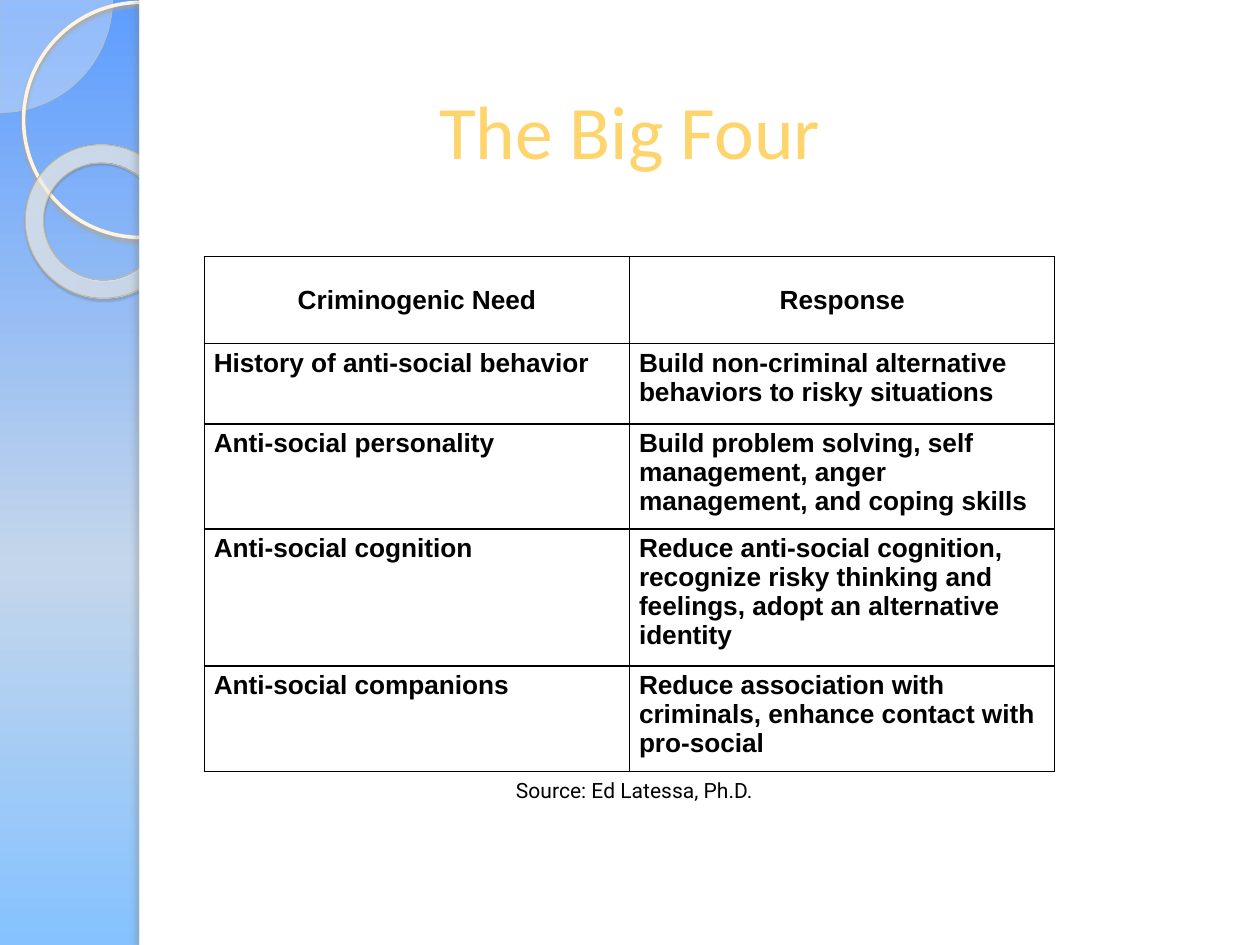
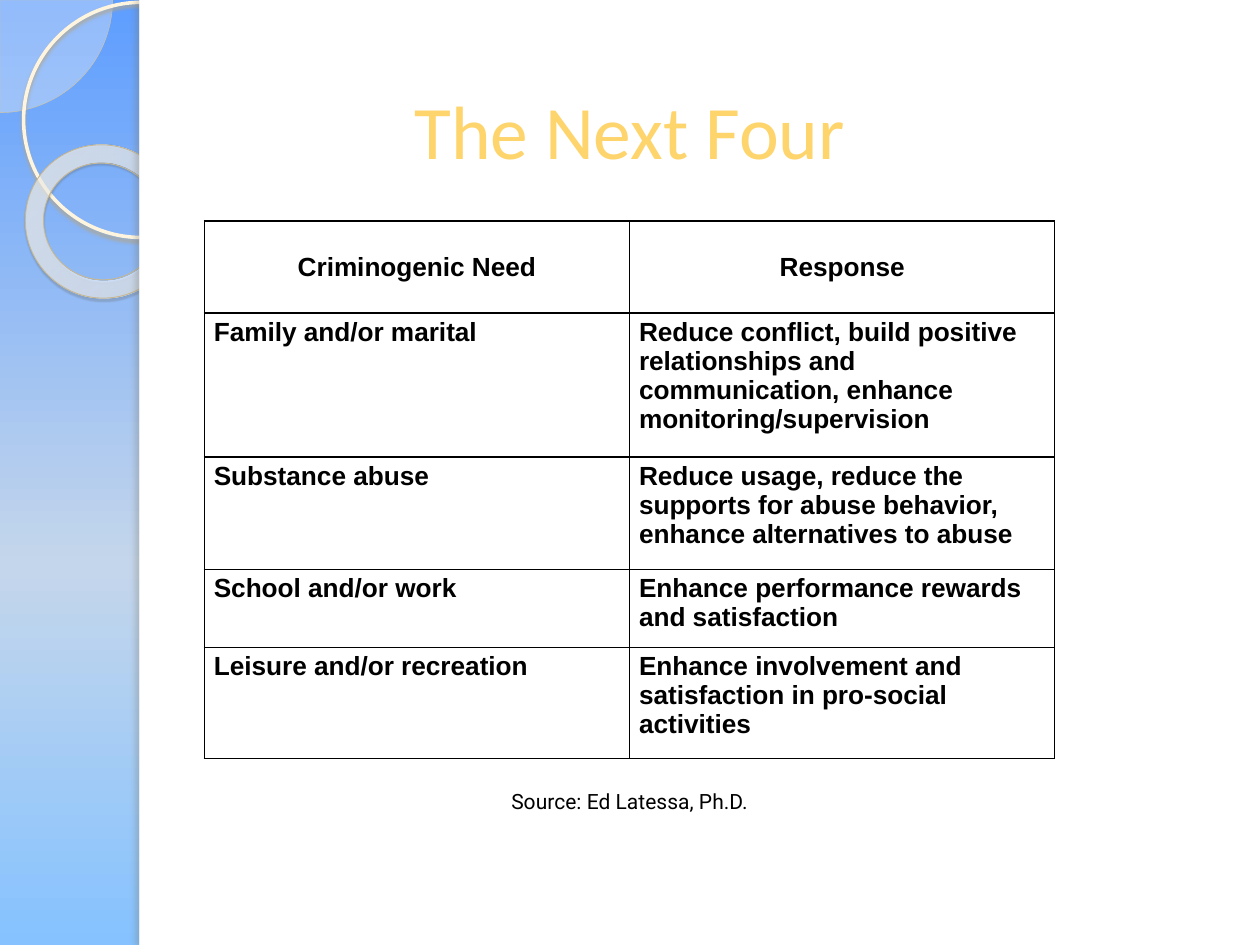
from lxml.etree import SubElement
from pptx import Presentation
from pptx.dml.color import RGBColor
from pptx.enum.shapes import MSO_SHAPE
from pptx.enum.text import MSO_ANCHOR, PP_ALIGN
from pptx.oxml.ns import qn
from pptx.util import Inches, Pt

WIDTH, HEIGHT = Inches(10.67), Inches(8)
COLUMNS, ROWS = 32, 24
GOLD, BLACK, WHITE = "FED46C", "000000", "FFFFFF"
SKY = [(0, "5E9EFF", 100), (60, "C4D6EB", 100), (100, "85C2FF", 100)]
RING = [(0, "FFFCF6", 70), (70, "FFFEFB", 55), (100, "F0D28E", 60)]
HEADINGS = ("Criminogenic Need", "Response")
SOURCE = "Source: Ed Latessa, Ph.D."

BIG_FOUR = [
    HEADINGS,
    ("History of anti-social behavior",
     "Build non-criminal alternative behaviors to risky situations"),
    ("Anti-social personality",
     "Build problem solving, self management, anger management, and coping skills"),
    ("Anti-social cognition",
     "Reduce anti-social cognition, recognize risky thinking and feelings, "
     "adopt an alternative identity"),
    ("Anti-social companions",
     "Reduce association with criminals, enhance contact with pro-social"),
]
NEXT_FOUR = [
    HEADINGS,
    ("Family and/or marital",
     "Reduce conflict, build positive relationships and communication, "
     "enhance monitoring/supervision"),
    ("Substance abuse",
     "Reduce usage, reduce the supports for abuse behavior, "
     "enhance alternatives to abuse"),
    ("School and/or work", "Enhance performance rewards and satisfaction"),
    ("Leisure and/or recreation",
     "Enhance involvement and satisfaction in pro-social activities"),
]


def across(columns):
    return round(WIDTH * columns / COLUMNS)


def down(rows):
    return round(HEIGHT * rows / ROWS)


def place(left, top, width, height):
    return across(left), down(top), across(width), down(height)


def color(code):
    return RGBColor.from_string(code)


def add_color(parent, code, opacity=100):
    tint = SubElement(parent, qn("a:srgbClr"), val=code)
    if opacity < 100:
        SubElement(tint, qn("a:alpha"), val=str(opacity * 1000))


def paint_gradient(fill, owner, stops, center=None):
    fill.gradient()
    gradient = owner.find(".//" + qn("a:gradFill"))
    for child in list(gradient):
        gradient.remove(child)
    stop_list = SubElement(gradient, qn("a:gsLst"))
    for position, code, opacity in stops:
        stop = SubElement(stop_list, qn("a:gs"), pos=str(position * 1000))
        add_color(stop, code, opacity)
    if center is None:
        SubElement(gradient, qn("a:lin"), ang="5400000", scaled="0")
    else:
        radial = SubElement(gradient, qn("a:path"), path="circle")
        edges = {side: str(share * 1000) for side, share in zip("ltrb", center)}
        SubElement(radial, qn("a:fillToRect"), **edges)


def add_figure(page, kind, area, fill=None, opacity=100, line=None):
    figure = page.shapes.add_shape(kind, *place(*area))
    figure.shadow.inherit = False
    if fill:
        figure.fill.solid()
        figure.fill.fore_color.rgb = color(fill)
        if opacity < 100:
            tint = figure.element.spPr.find(qn("a:solidFill")).find(qn("a:srgbClr"))
            SubElement(tint, qn("a:alpha"), val=str(opacity * 1000))
    else:
        figure.fill.background()
    if line:
        figure.line.color.rgb = color(line[0])
        figure.line.width = Pt(line[1])
    else:
        figure.line.fill.background()
    return figure


def cast_shadow(figure, code, opacity, blur, distance, angle):
    effects = figure.element.spPr.find(qn("a:effectLst"))
    shadow = SubElement(
        effects, qn("a:outerShdw"), blurRad=str(Pt(blur)), dist=str(Pt(distance)),
        dir=str(angle * 60000), algn="tl", rotWithShape="0")
    add_color(shadow, code, opacity)


def add_side_band(page):
    corner = add_figure(page, MSO_SHAPE.PIE, (-2.86, -2.86, 5.72, 5.72),
                        "FEFAF4", 33, ("D3C39F", 0.25))
    corner.adjustments[0] = 0
    corner.adjustments[1] = 54
    circle = add_figure(page, MSO_SHAPE.OVAL, (0.6, 0.06, 5.97, 5.97),
                        line=("FFF5DE", 2.15))
    cast_shadow(circle, "B0A68F", 85, 2, 2, 90)
    ring = add_figure(page, MSO_SHAPE.DONUT, (0.63, 3.69, 3.93, 3.87),
                      line=("C7B893", 0.58))
    ring.adjustments[0] = 0.12
    ring.rotation = 38.6
    paint_gradient(ring.fill, ring.element, RING, (-408, -50, 508, 150))
    cast_shadow(ring, "5A5444", 35, 1, 1.2, 75)
    edge = 3.54
    add_figure(page, MSO_SHAPE.RECTANGLE, (edge, 0, COLUMNS - edge, ROWS), WHITE)
    strip = add_figure(page, MSO_SHAPE.RECTANGLE, (edge, 0, 0.27, ROWS), WHITE)
    cast_shadow(strip, "736F63", 25, 3, 3, 180)


def write(frame, text, font, size, code, align=PP_ALIGN.CENTER, bold=False):
    paragraph = frame.paragraphs[0]
    paragraph.text = text
    paragraph.alignment = align
    paragraph.font.name = font
    paragraph.font.size = Pt(size)
    paragraph.font.bold = bold
    paragraph.font.color.rgb = color(code)


def add_label(page, area, text, font, size, code, anchor=MSO_ANCHOR.TOP):
    frame = page.shapes.add_textbox(*place(*area)).text_frame
    frame.word_wrap = True
    frame.vertical_anchor = anchor
    write(frame, text, font, size, code)


def outline(cell):
    properties = cell._tc.get_or_add_tcPr()
    for side in ("lnL", "lnR", "lnT", "lnB"):
        border = SubElement(properties, qn("a:" + side), w=str(Pt(1)))
        add_color(SubElement(border, qn("a:solidFill")), BLACK)


def add_needs_table(page, top, heights, entries):
    area = place(5.19, top, 21.6, sum(heights))
    table = page.shapes.add_table(len(entries), len(HEADINGS), *area).table
    table.first_row = table.horz_banding = False
    for index, (height, entry) in enumerate(zip(heights, entries)):
        table.rows[index].height = down(height)
        heading = index == 0
        for column, text in enumerate(entry):
            cell = table.cell(index, column)
            cell.margin_left = cell.margin_right = Inches(0.08)
            cell.margin_top = cell.margin_bottom = Inches(0.04)
            cell.vertical_anchor = MSO_ANCHOR.MIDDLE if heading else MSO_ANCHOR.TOP
            outline(cell)
            cell.fill.background()
            align = PP_ALIGN.CENTER if heading else PP_ALIGN.LEFT
            write(cell.text_frame, text, "Arial", 16, BLACK, align, True)


def add_needs_page(deck, title, top, heights, entries, source_corner):
    page = deck.slides.add_slide(deck.slide_layouts[6])
    add_side_band(page)
    add_label(page, (1.59, 0.96, 28.8, 4.65), title, "Calibri", 46, GOLD,
              MSO_ANCHOR.MIDDLE)
    add_needs_table(page, top, heights, entries)
    add_label(page, (*source_corner, 21, 0.96), SOURCE, "Roboto", 12.8, BLACK)


def main():
    deck = Presentation()
    deck.slide_width, deck.slide_height = WIDTH, HEIGHT
    master = deck.slide_master
    paint_gradient(master.background.fill, master.element, SKY)
    add_needs_page(deck, "The Big Four", 6.51, (2.22, 2.04, 2.67, 3.48, 2.67),
                   BIG_FOUR, (5.61, 19.59))
    add_needs_page(deck, "The Next Four", 5.61, (2.34, 3.66, 2.85, 1.98, 2.82),
                   NEXT_FOUR, (5.49, 19.89))
    deck.save("out.pptx")


if __name__ == "__main__":
    main()
